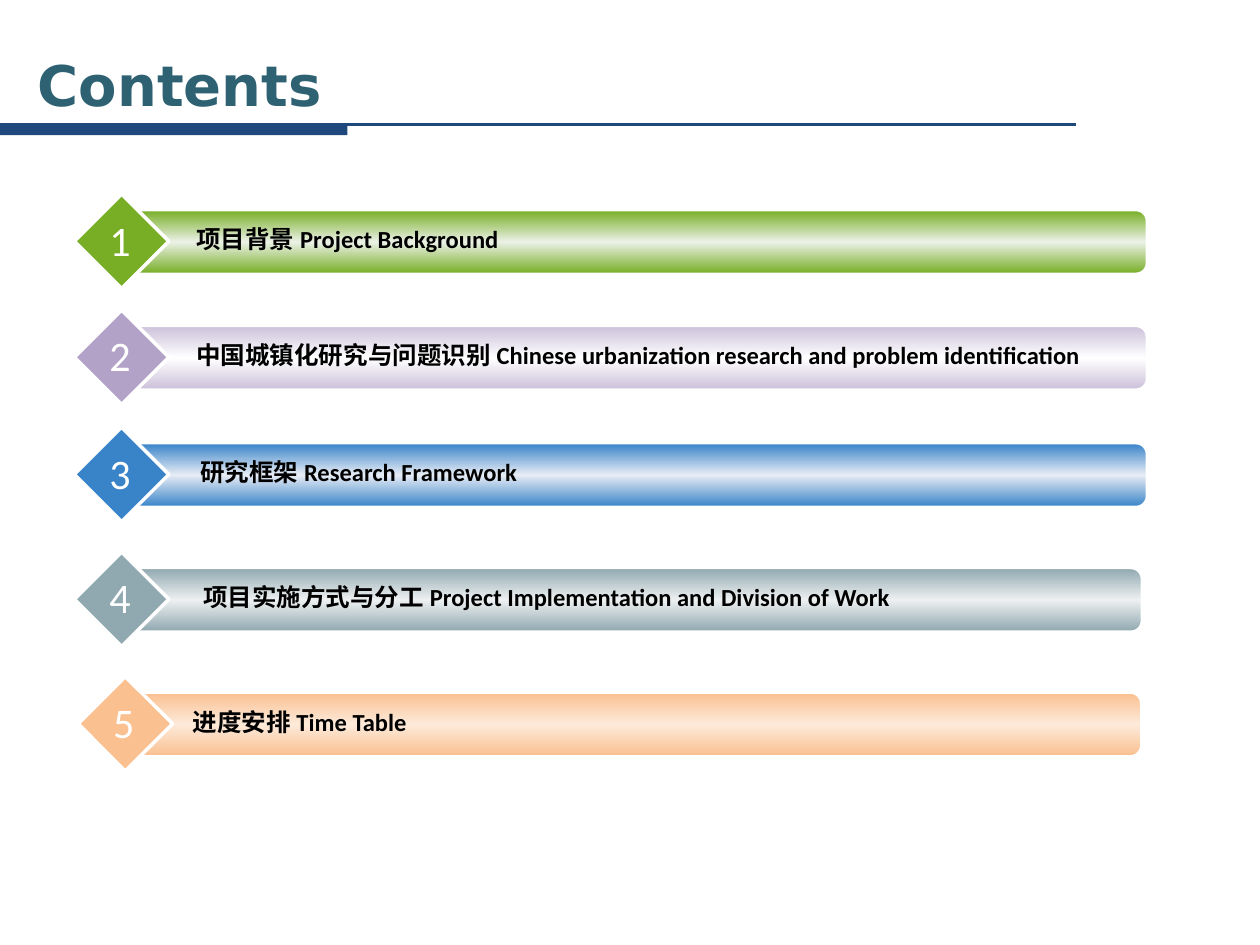
"""Build the Contents slide with five numbered, gradient-filled entries."""
from copy import deepcopy

from pptx import Presentation
from pptx import util as u
from pptx.dml import color
from pptx.enum import shapes, text
from pptx.oxml import ns

COLORS = {
    "navy": "1F497D", "teal": "2E6272", "white": "FFFFFF", "black": "000000",
    "green": "77AE26", "pale_green": "EBF1E6",
    "purple": "B3A2C7", "lilac": "CCC1DA",
    "blue": "3984C9", "pale_blue": "E7ECF5",
    "gray": "90A8B0", "pale_gray": "EDF0F1",
    "orange": "FAC090", "pale_orange": "FDEADA",
}
CHINESE_FONT = "Noto Sans CJK SC"


def rgb(name):
    return color.RGBColor.from_string(COLORS[name])


def add_run(paragraph, content, *, font="Calibri", size=14, fill="black", bold=False):
    run = paragraph.add_run()
    run.text = content
    run.font.name = font
    run.font.size = u.Pt(size)
    run.font.bold = bold
    run.font.color.rgb = rgb(fill)
    if font == CHINESE_FONT:
        east_asian = run.font._element.makeelement(ns.qn("a:ea"), {"typeface": font})
        run.font._element.append(east_asian)


presentation = Presentation()
presentation.slide_width = u.Pt(720)
presentation.slide_height = u.Pt(540)
slide = presentation.slides.add_slide(presentation.slide_layouts[5])

rule = slide.shapes.add_connector(
    shapes.MSO_CONNECTOR.STRAIGHT, u.Pt(0), u.Pt(71.3), u.Pt(615), u.Pt(71.3))
rule.line.color.rgb = rgb("navy")
rule.line.width = u.Pt(1.5)
properties = rule._element.spPr
properties.append(properties.makeelement(ns.qn("a:effectLst"), {}))

accent = slide.shapes.add_shape(
    shapes.MSO_SHAPE.RECTANGLE, u.Pt(0), u.Pt(71.3), u.Pt(198.5), u.Pt(6))
accent.shadow.inherit = False
accent.fill.solid()
accent.fill.fore_color.rgb = rgb("navy")
accent.line.fill.background()

title = slide.shapes.title
title.left, title.top, title.width, title.height = u.Pt(14.4), u.Pt(26), u.Pt(606), u.Pt(44.6)
title.text_frame.vertical_anchor = text.MSO_ANCHOR.MIDDLE
title.text_frame.auto_size = text.MSO_AUTO_SIZE.NONE
paragraph = title.text_frame.paragraphs[0]
paragraph.alignment = text.PP_ALIGN.LEFT
add_run(paragraph, "Contents", font="DejaVu Sans", size=32, fill="teal", bold=True)

entries = [
    (42.5, 110.9, 655.2, 105.1, "green", "green", "pale_green",
     "项目背景", "Project Background"),
    (42.5, 177.1, 655.2, 105.1, "purple", "lilac", "white",
     "中国城镇化研究与问题识别", "Chinese urbanization research and problem identification"),
    (42.5, 244.1, 655.2, 107.3, "blue", "blue", "pale_blue",
     "研究框架", "Research Framework"),
    (42.5, 315.4, 652.3, 109, "gray", "gray", "pale_gray",
     "项目实施方式与分工", "Project Implementation and Division of Work"),
    (44.6, 386.6, 652, 103, "orange", "orange", "pale_orange",
     "进度安排", "Time Table"),
]
for number, (left, top, right, label_left, main, edge, middle, chinese, english) in enumerate(entries, 1):
    bar_left = left + 30.2
    bar = slide.shapes.add_shape(
        shapes.MSO_SHAPE.ROUNDED_RECTANGLE,
        u.Pt(bar_left), u.Pt(top + 9.4), u.Pt(right - bar_left), u.Pt(36))
    bar.adjustments[0] = 0.167
    bar.fill.gradient()
    bar.fill.gradient_angle = 90
    stop_list = bar._element.spPr.find(".//" + ns.qn("a:gsLst"))
    stop_list.insert(1, deepcopy(stop_list[0]))
    for stop, position, name in zip(bar.fill.gradient_stops, (0, 0.5, 1), (edge, middle, edge)):
        stop.position = position
        stop.color.rgb = rgb(name)

    diamond = slide.shapes.add_shape(
        shapes.MSO_SHAPE.DIAMOND, u.Pt(left), u.Pt(top), u.Pt(54), u.Pt(54))
    diamond.fill.solid()
    diamond.fill.fore_color.rgb = rgb(main)
    for shape, width in ((bar, 1), (diamond, 2)):
        shape.shadow.inherit = False
        shape.line.color.rgb = rgb("white")
        shape.line.width = u.Pt(width)

    label = slide.shapes.add_textbox(
        u.Pt(label_left), u.Pt(top + 13.7), u.Pt(right - label_left), u.Pt(24.2))
    label.text_frame.word_wrap = True
    paragraph = label.text_frame.paragraphs[0]
    add_run(paragraph, chinese + " ", font=CHINESE_FONT, bold=True)
    add_run(paragraph, english, bold=True)

    digit = slide.shapes.add_textbox(
        u.Pt(left + 12.8), u.Pt(top + 7.9), u.Pt(26.6), u.Pt(36.4))
    digit.text_frame.word_wrap = False
    paragraph = digit.text_frame.paragraphs[0]
    paragraph.alignment = text.PP_ALIGN.CENTER
    add_run(paragraph, str(number), size=24, fill="white")

presentation.save("out.pptx")
